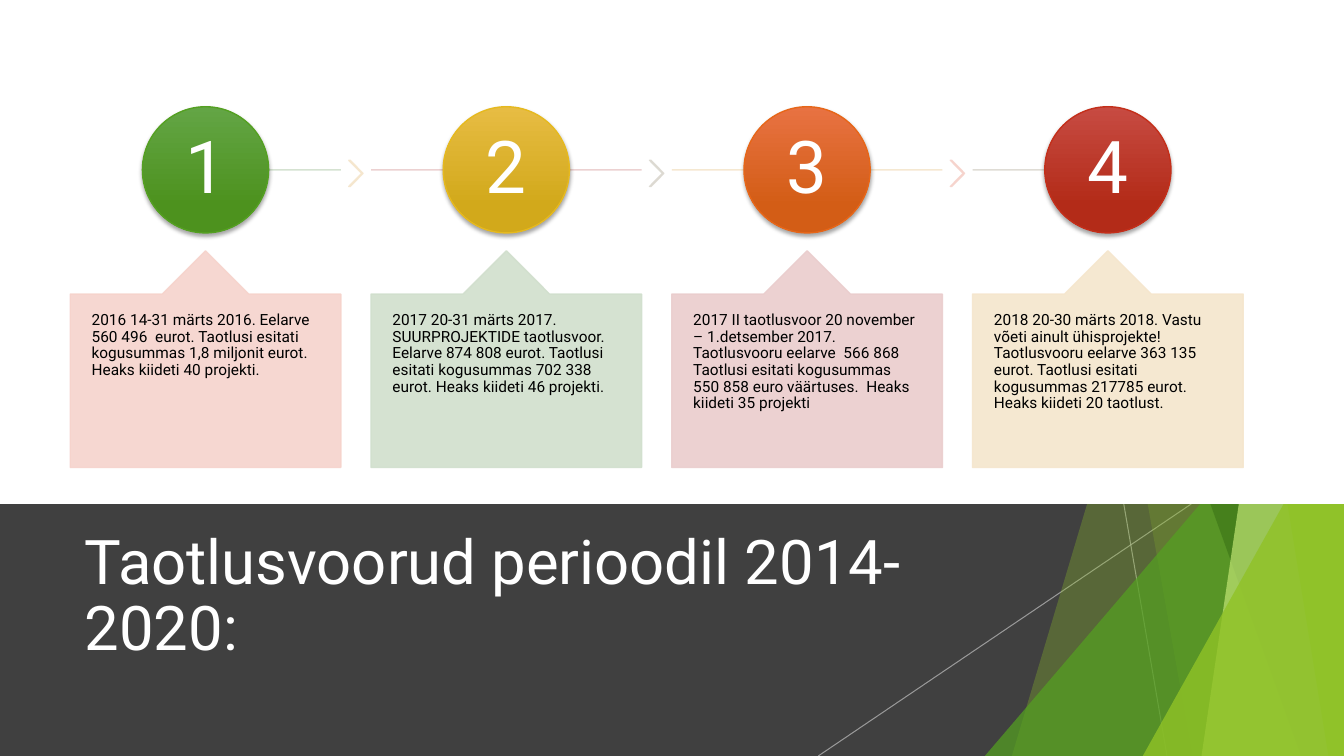
"""Build a slide with four numbered funding rounds above a dark title band."""
from pptx import Presentation
from pptx.dml.color import RGBColor
from pptx.enum.shapes import MSO_CONNECTOR, MSO_SHAPE
from pptx.enum.text import MSO_ANCHOR, MSO_AUTO_SIZE, PP_ALIGN
from pptx.oxml import parse_xml
from pptx.oxml.ns import nsdecls, qn
from pptx.oxml.xmlchemy import OxmlElement
from pptx.util import Cm, Pt

TITLE = "Taotlusvoorud perioodil 2014-2020:"
FONT = "Roboto"
WIDE, HIGH, SPLIT = 33.87, 19.05, 12.7

ROUNDS = [
    ("2016 14-31 märts 2016. Eelarve 560 496  eurot. Taotlusi esitati "
     "kogusummas 1,8 miljonit eurot. Heaks kiideti 40 projekti.",
     "F6D3CC", "D1DFCD", ("63A545", "4D921E", "54A021")),
    ("2017 20-31 märts 2017. SUURPROJEKTIDE taotlusvoor. Eelarve 874 808 eurot. "
     "Taotlusi esitati kogusummas 702 338 eurot. Heaks kiideti 46 projekti.",
     "D1DFCD", "EACDCD", ("E7BC43", "D2A91B", "E6B91E")),
    ("2017 II taotlusvoor 20 november – 1.detsember 2017. Taotlusvooru eelarve  "
     "566 868 Taotlusi esitati kogusummas 550 858 euro väärtuses.  "
     "Heaks kiideti 35 projekti",
     "EACDCD", "F5E6CD", ("E87242", "D35D16", "E76618")),
    ("2018 20-30 märts 2018. Vastu võeti ainult ühisprojekte! Taotlusvooru "
     "eelarve 363 135 eurot. Taotlusi esitati kogusummas 217785 eurot. "
     "Heaks kiideti 20 taotlust.",
     "F5E6CD", "DCD9D1", ("C74B42", "B32B18", "C42F1A")),
]
ARROWS = ["F5E6CD", "DCD9D1", "F6D3CC"]

RAYS = [(28.32, 29.41), (30.02, 20.62)]
WEDGES = [
    ("band", 31.19, 25.5, "90C226", 30),
    ("band", 26.67, 30.05, "90C226", 20),
    ("peak", 24.82, 8.46, "54A021", 72),
    ("band", 25.93, 32.79, "3F7819", 70),
    ("band", 33.1, 30.28, "C0E474", 70),
    ("band", 30.38, 33.48, "90C226", 65),
    ("peak", 28.8, 9.98, "90C226", 80),
]

LEFT, STEP, CARD = 1.77, 7.58, 6.82
BALL, BALL_TOP, DIGIT = 3.18, 2.69, 2.24
AXIS = BALL_TOP + BALL / 2


def color(code):
    return RGBColor.from_string(code)


def fade(shape, level):
    for node in shape.element.spPr.iter(qn("a:srgbClr")):
        alpha = OxmlElement("a:alpha")
        alpha.set("val", str(level * 1000))
        node.append(alpha)


def paint(shape, fill, level=100, edge=None):
    shape.shadow.inherit = False
    shape.fill.solid()
    shape.fill.fore_color.rgb = color(fill)
    if edge:
        shape.line.color.rgb = color(edge)
        shape.line.width = Pt(1)
    else:
        shape.line.fill.background()
    if level < 100:
        fade(shape, level)


def place(kind, x, y, w, h, adjust=()):
    shape = shapes.add_shape(kind, Cm(x), Cm(y), Cm(w), Cm(h))
    for i, value in enumerate(adjust):
        shape.adjustments[i] = value
    return shape


def rule(x1, y1, x2, y2, code, width, level):
    line = shapes.add_connector(
        MSO_CONNECTOR.STRAIGHT, Cm(x1), Cm(y1), Cm(x2), Cm(y2))
    line.line.color.rgb = color(code)
    line.line.width = Pt(width)
    line.element.spPr.append(OxmlElement("a:effectLst"))
    fade(line, level)


def style(frame, text, size, code, anchor, align):
    frame.word_wrap = True
    frame.auto_size = MSO_AUTO_SIZE.NONE
    frame.vertical_anchor = anchor
    frame.text = text
    para = frame.paragraphs[0]
    para.alignment = align
    para.line_spacing = 0.9
    para.font.name = FONT
    para.font.size = Pt(size)
    para.font.color.rgb = color(code)


def label(x, y, w, h, pad, *look):
    frame = shapes.add_textbox(Cm(x), Cm(y), Cm(w), Cm(h)).text_frame
    frame.margin_left = frame.margin_right = Cm(pad[0])
    frame.margin_top = frame.margin_bottom = Cm(pad[1])
    style(frame, *look)


def add_ball(x, top, base, edge):
    ball = place(MSO_SHAPE.OVAL, x, BALL_TOP, BALL, BALL)
    ball.fill.gradient()
    ball.fill.gradient_angle = 270
    for stop, code, spot in zip(ball.fill.gradient_stops, (top, base), (0, 0.78)):
        stop.color.rgb = color(code)
        stop.position = spot
    ball.line.color.rgb = color(edge)
    ball.line.width = Pt(1)
    ball.element.spPr.append(parse_xml(
        f'<a:effectLst {nsdecls("a")}><a:outerShdw blurRad="38100" dist="25400" '
        'dir="5400000" rotWithShape="0"><a:srgbClr val="000000">'
        '<a:alpha val="35000"/></a:srgbClr></a:outerShdw></a:effectLst>'))


def add_wedge(kind, a, b, code, level):
    if kind == "peak":
        wedge = place(MSO_SHAPE.ISOSCELES_TRIANGLE, a, b, WIDE - a, HIGH - b, [1])
    else:
        pen = shapes.build_freeform(Cm(a), Cm(0))
        pen.add_line_segments(
            [(Cm(x), Cm(y)) for x, y in ((WIDE, 0), (WIDE, HIGH), (b, HIGH))])
        wedge = pen.convert_to_shape()
    paint(wedge, code, level)


def add_round(i, text, tint, track, shades):
    x = LEFT + i * STEP
    mid = x + CARD / 2
    last = i == len(ROUNDS) - 1
    rule(x if i else mid, AXIS, mid if last else x + CARD, AXIS, track, 1, 90)
    if not last:
        arrow = place(MSO_SHAPE.CHEVRON, x + CARD + 0.2, 4.04, 0.36, 0.66, [0.9])
        paint(arrow, ARROWS[i], 90, ARROWS[i])
    add_ball(mid - BALL / 2, *shades)
    label(mid - DIGIT / 2, AXIS - DIGIT / 2, DIGIT, DIGIT, (0.13, 0.13),
          str(i + 1), 52, "FFFFFF", MSO_ANCHOR.MIDDLE, PP_ALIGN.CENTER)
    card = place(MSO_SHAPE.UP_ARROW_CALLOUT, x, 6.32, CARD, 5.46, [0.5, 0.2, 0.2, 1])
    card.adjustments[3] = 0.8
    paint(card, tint, 90, tint)
    label(x, 7.42, CARD, 4.37, (0.54, 0.45),
          text, 11, "000000", MSO_ANCHOR.TOP, PP_ALIGN.LEFT)


deck = Presentation()
deck.slide_width, deck.slide_height = Cm(WIDE), Cm(HIGH)
shapes = deck.slides.add_slide(deck.slide_layouts[5]).shapes

paint(place(MSO_SHAPE.RECTANGLE, 0, SPLIT, WIDE, HIGH - SPLIT), "404040")
for top, base in RAYS:
    rule(top, SPLIT, base, HIGH, "BFBFBF", 0.75, 70)
for wedge in WEDGES:
    add_wedge(*wedge)

title = shapes.title
title.left, title.top, title.width, title.height = (
    Cm(1.88), Cm(13.23), Cm(23.88), Cm(3.66))
style(title.text_frame, TITLE, 44, "FFFFFF", MSO_ANCHOR.MIDDLE, PP_ALIGN.LEFT)
shapes.element.append(title.element)

paint(place(MSO_SHAPE.RECTANGLE, 0, 0, WIDE, SPLIT), "FFFFFF")
for i, item in enumerate(ROUNDS):
    add_round(i, *item)

deck.save("out.pptx")
